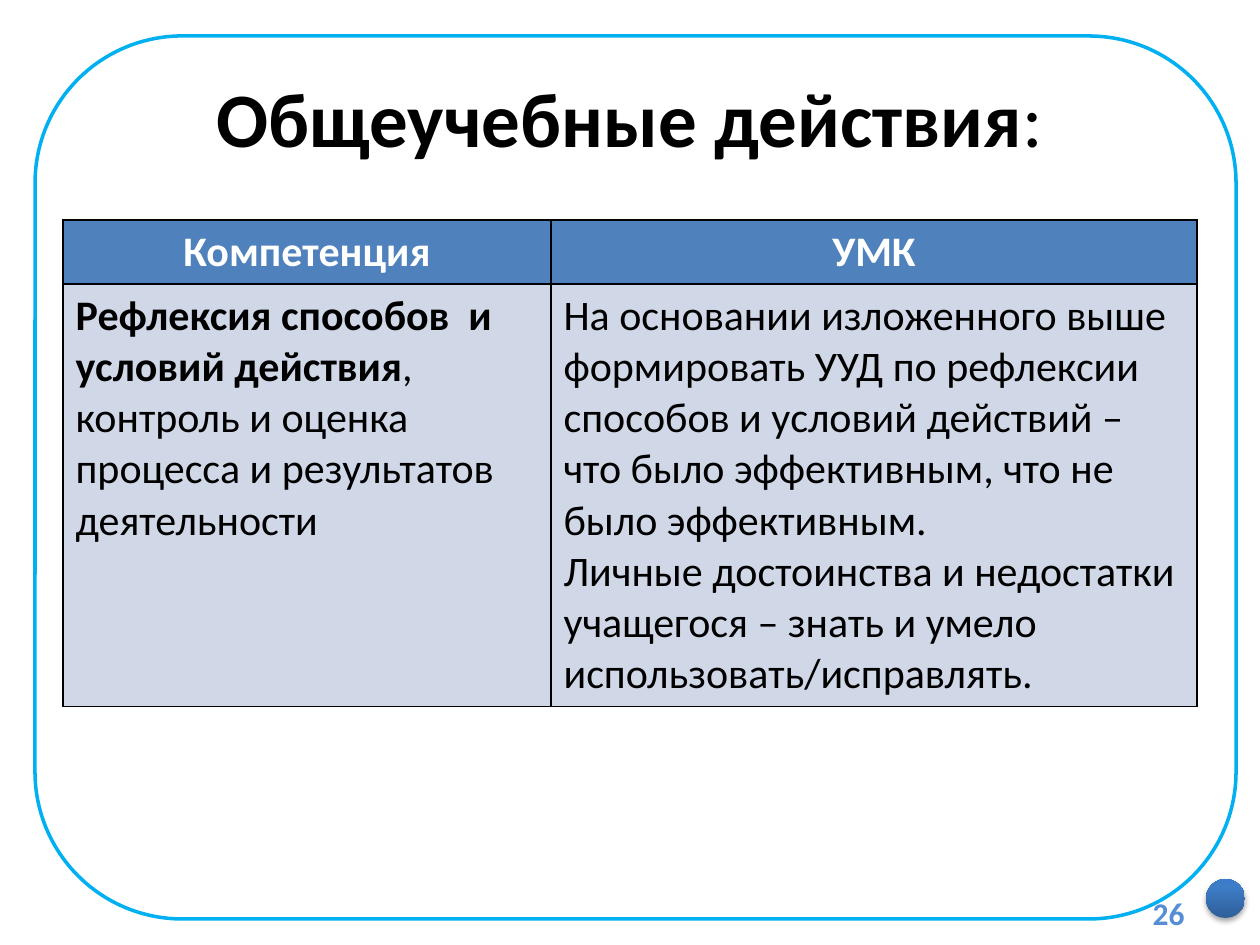
import pptx
import pptx.dml.color
import pptx.enum.shapes
import pptx.enum.text
import pptx.oxml
import pptx.oxml.ns
import pptx.util
from dataclasses import dataclass

EMU_PER_PX = 914400 / 126
ALIGN = pptx.enum.text.PP_ALIGN
ANCHOR = pptx.enum.text.MSO_ANCHOR
SHAPE = pptx.enum.shapes.MSO_SHAPE


@dataclass(frozen=True)
class Theme:
    font: str = "Calibri"
    title_size: int = 44
    table_size: int = 24
    number_size: int = 18
    ink: str = "000000"
    header_ink: str = "FFFFFF"
    header_fill: str = "4F81BD"
    body_fill: str = "D0D8E8"
    frame: str = "00B0F0"
    number: str = "558ED5"
    ball: tuple = ((0, "2F5F99"), (80, "3D7CC7"), (100, "3A7CCB"))


THEME = Theme()

TITLE = [[("Общеучебные действия", True), (":", False)]]
HEADERS = ["Компетенция", "УМК"]
COMPETENCE = [[
    ("Рефлексия способов  и условий действия", True),
    (", контроль и оценка процесса и результатов деятельности", False),
]]
MATERIALS = [
    [("На основании изложенного выше формировать УУД по рефлексии способов "
      "и условий действий – что было эффективным, что не было эффективным.", False)],
    [("Личные достоинства и недостатки учащегося – знать и умело "
      "использовать/исправлять.", False)],
]


def px(length):
    return pptx.util.Emu(round(length * EMU_PER_PX))


def box(*lengths):
    return [px(length) for length in lengths]


def rgb(color):
    return pptx.dml.color.RGBColor.from_string(color)


def drawing_xml(tag, attributes, content):
    """Parse one DrawingML element."""
    namespace = pptx.oxml.ns.nsdecls("a")
    return pptx.oxml.parse_xml(f"<a:{tag} {namespace} {attributes}>{content}</a:{tag}>")


def write_text(frame, paragraphs, *, size, color, align=ALIGN.LEFT):
    """Fill a text frame with paragraphs, each a list of (text, bold) runs."""
    frame.word_wrap = True
    for index, runs in enumerate(paragraphs):
        paragraph = frame.paragraphs[0] if index == 0 else frame.add_paragraph()
        paragraph.alignment = align
        for text, bold in runs:
            run = paragraph.add_run()
            run.text = text
            run.font.name = THEME.font
            run.font.size = pptx.util.Pt(size)
            run.font.bold = bold
            run.font.color.rgb = rgb(color)


def add_frame(slide):
    frame = slide.shapes.add_shape(SHAPE.ROUNDED_RECTANGLE, *box(35, 36, 1201, 883))
    frame.shadow.inherit = False
    frame.fill.background()
    frame.line.color.rgb = rgb(THEME.frame)
    frame.line.width = pptx.util.Pt(2)


def add_ball(slide):
    """Shaded circle in the corner, with a soft shadow below it."""
    ball = slide.shapes.add_shape(SHAPE.OVAL, *box(1206, 879, 39, 39))
    ball.line.fill.background()
    ball.fill.gradient()
    ball.fill.gradient_angle = 90
    properties = ball.element.spPr
    stops = properties.find(".//" + pptx.oxml.ns.qn("a:gsLst"))
    for stop in list(stops):
        stops.remove(stop)
    for percent, color in THEME.ball:
        stops.append(drawing_xml("gs", f'pos="{percent * 1000}"',
                                 f'<a:srgbClr val="{color}"/>'))
    ball.shadow.inherit = False
    effects = properties.find(pptx.oxml.ns.qn("a:effectLst"))
    blur, distance = pptx.util.Pt(3.1), pptx.util.Pt(1.8)
    effects.append(drawing_xml(
        "outerShdw",
        f'blurRad="{blur}" dist="{distance}" dir="5400000" rotWithShape="0"',
        f'<a:srgbClr val="{THEME.ink}"><a:alpha val="35000"/></a:srgbClr>'))


def place_title(slide):
    title = slide.shapes.title
    title.left, title.top, title.width, title.height = box(63, 38, 1134, 158)
    title.text_frame.vertical_anchor = ANCHOR.MIDDLE
    write_text(title.text_frame, TITLE, size=THEME.title_size,
               color=THEME.ink, align=ALIGN.CENTER)


def format_cell(cell, paragraphs, *, fill, **text_format):
    cell.fill.solid()
    cell.fill.fore_color.rgb = rgb(fill)
    width = pptx.util.Pt(1)
    for position, side in enumerate(("lnL", "lnR", "lnT", "lnB")):
        border = drawing_xml(
            side, f'w="{width}"',
            f'<a:solidFill><a:srgbClr val="{THEME.ink}"/></a:solidFill>')
        cell._tc.get_or_add_tcPr().insert(position, border)
    write_text(cell.text_frame, paragraphs, size=THEME.table_size, **text_format)


def add_competence_table(slide):
    table = slide.shapes.add_table(2, 2, *box(63, 220, 1134, 486)).table
    for column, width in zip(table.columns, (488, 646)):
        column.width = px(width)
    for row, height in zip(table.rows, (64, 422)):
        row.height = px(height)
    for index, header in enumerate(HEADERS):
        format_cell(table.cell(0, index), [[(header, True)]], fill=THEME.header_fill,
                    color=THEME.header_ink, align=ALIGN.CENTER)
    for index, paragraphs in enumerate((COMPETENCE, MATERIALS)):
        format_cell(table.cell(1, index), paragraphs, fill=THEME.body_fill,
                    color=THEME.ink)


def add_page_number(slide):
    number = slide.shapes.add_textbox(*box(1126, 888, 71, 50)).text_frame
    number.vertical_anchor = ANCHOR.MIDDLE
    write_text(number, [[("26", True)]], size=THEME.number_size,
               color=THEME.number, align=ALIGN.RIGHT)


def main():
    presentation = pptx.Presentation()
    presentation.slide_width, presentation.slide_height = box(1260, 945)
    slide = presentation.slides.add_slide(presentation.slide_layouts[5])
    add_frame(slide)
    add_ball(slide)
    place_title(slide)
    add_competence_table(slide)
    add_page_number(slide)
    presentation.save("out.pptx")


if __name__ == "__main__":
    main()
